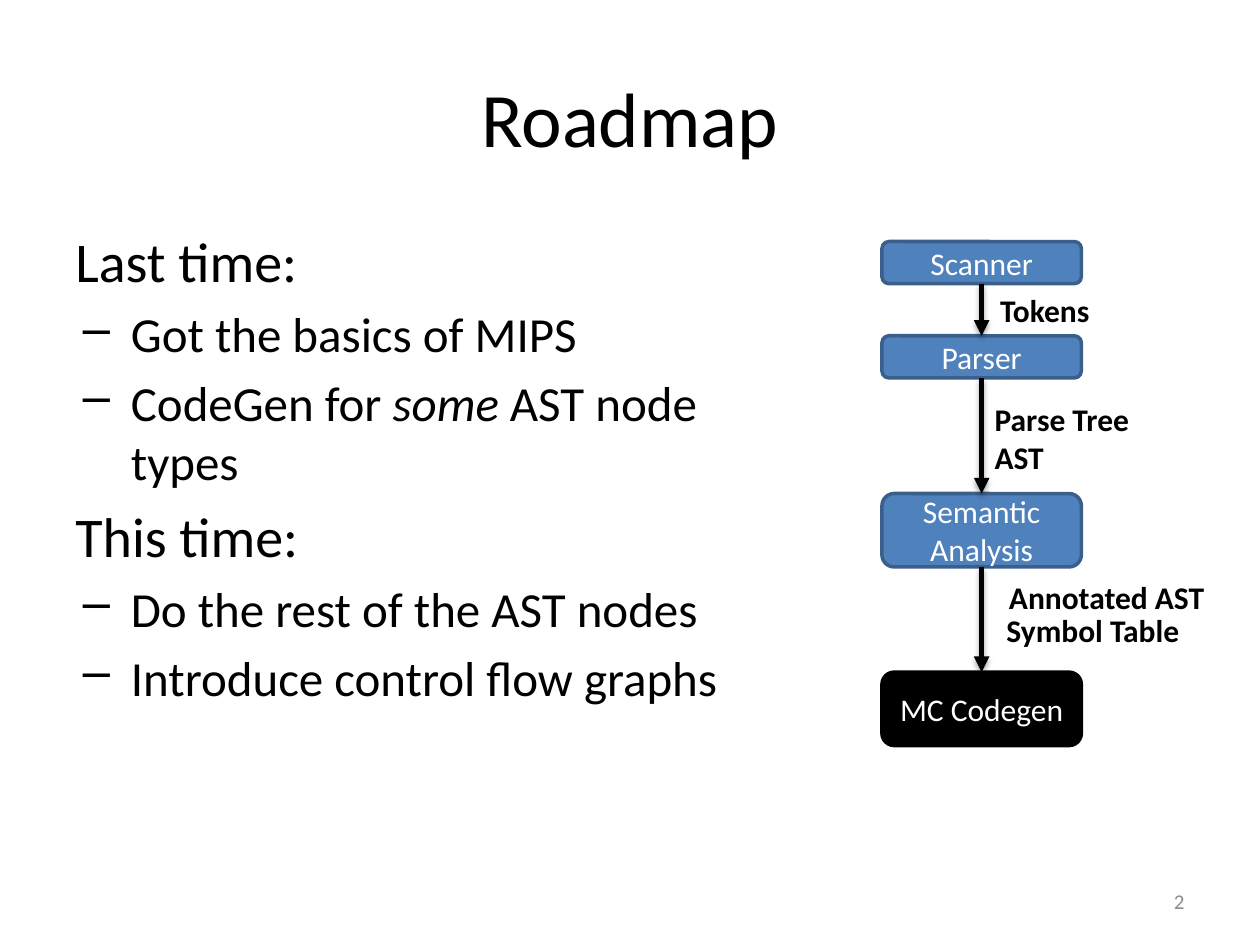
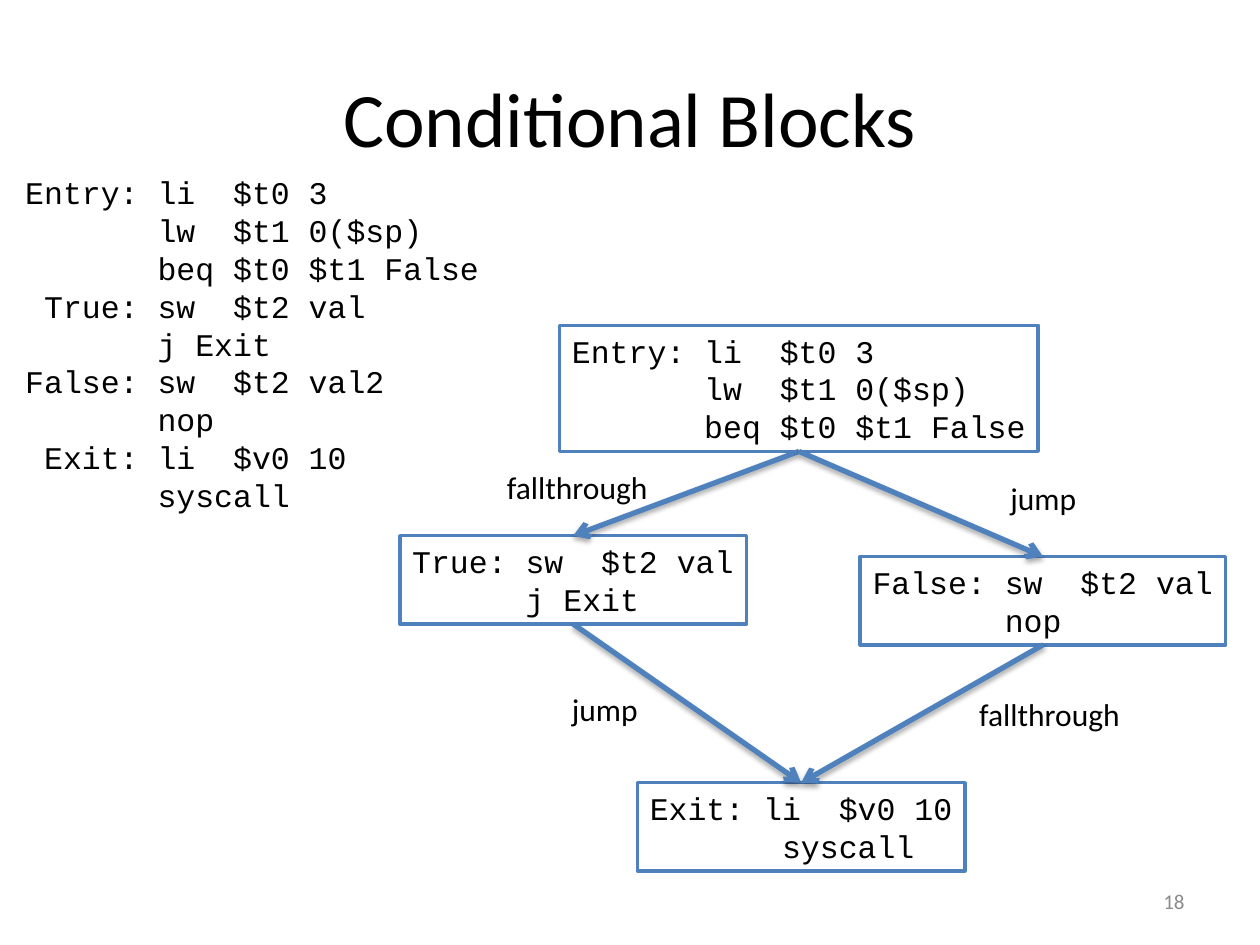
"""Build two compiler lecture slides: a roadmap and a control flow graph."""
from lxml import etree
from pptx import Presentation
from pptx.dml.color import RGBColor
from pptx.enum import shapes, text
from pptx.oxml import ns
from pptx.util import Cm, Pt

BLACK = RGBColor(0x00, 0x00, 0x00)
WHITE = RGBColor(0xFF, 0xFF, 0xFF)
BLUE = RGBColor(0x4F, 0x81, 0xBD)
NAVY = RGBColor(0x3A, 0x5F, 0x8B)
GRAY = RGBColor(0x8B, 0x8B, 0x8B)
SANS = "Calibri"
MONO = "Courier New"
TOP, BOTTOM = 0, 2
LEFT, CENTER, RIGHT = text.PP_ALIGN.LEFT, text.PP_ALIGN.CENTER, text.PP_ALIGN.RIGHT

CODE = """Entry: li  $t0 3
       lw  $t1 0($sp)
       beq $t0 $t1 False
 True: sw  $t2 val
       j Exit
False: sw  $t2 val2
       nop
 Exit: li  $v0 10
       syscall"""
ENTRY = """Entry: li  $t0 3
       lw  $t1 0($sp)
       beq $t0 $t1 False"""
TRUE = """True: sw  $t2 val
      j Exit"""
FALSE = """False: sw  $t2 val
       nop"""
EXIT = """Exit: li  $v0 10
       syscall"""


def add(parent, tag, **attrs):
    """Append a drawing element with the given attributes."""
    node = etree.SubElement(parent, ns.qn(tag))
    for name, value in attrs.items():
        node.set(name, str(value))
    return node


def style(para, size, color=BLACK, font=SANS, bold=False, align=LEFT):
    """Set the font and alignment of a paragraph."""
    para.font.size = Pt(size)
    para.font.name = font
    para.font.bold = bold
    para.font.color.rgb = color
    para.alignment = align


def write(shape, words, size=18, **look):
    """Fill a shape with one paragraph per line of words."""
    frame = shape.text_frame
    for i, line in enumerate(words.split("\n")):
        para = frame.paragraphs[0] if i == 0 else frame.add_paragraph()
        para.add_run().text = line
        style(para, size, **look)
    return frame


def place(x, y, wide, high):
    """Turn centimetres into a position and size."""
    return Cm(x), Cm(y), Cm(wide), Cm(high)


def fit(frame):
    """Keep lines unbroken and let the shape follow its text."""
    frame.word_wrap = False
    frame.auto_size = text.MSO_AUTO_SIZE.SHAPE_TO_FIT_TEXT


def start(deck, title, number):
    """Add a slide with its title and page number."""
    slide = deck.slides.add_slide(deck.slide_layouts[5])
    head = slide.shapes.title
    head.left, head.top, head.width, head.height = place(1.27, 0.76, 22.86, 3.18)
    frame = write(head, title, 44, align=CENTER)
    frame.vertical_anchor = text.MSO_ANCHOR.MIDDLE
    page = slide.shapes.add_textbox(*place(18.2, 17.65, 5.93, 1.02))
    frame = write(page, number, 12, color=GRAY, align=RIGHT)
    frame.vertical_anchor = text.MSO_ANCHOR.MIDDLE
    return slide


def label(slide, words, x, y, wide, high=1.02, **look):
    """Add free text that does not wrap."""
    shape = slide.shapes.add_textbox(*place(x, y, wide, high))
    fit(write(shape, words, **look))


def box(slide, kind, spot, fill, line):
    """Add a flat filled and outlined shape."""
    shape = slide.shapes.add_shape(kind, *place(*spot))
    shape.shadow.inherit = False
    shape.fill.solid()
    shape.fill.fore_color.rgb = fill
    shape.line.color.rgb = line
    shape.line.width = Pt(2)
    return shape


def stage(slide, words, y, high, fill=BLUE, line=NAVY):
    """Add a rounded compiler stage."""
    kind = shapes.MSO_SHAPE.ROUNDED_RECTANGLE
    shape = box(slide, kind, (17.78, y, 4.02, high), fill, line)
    frame = write(shape, words, color=WHITE, align=CENTER)
    frame.word_wrap = True
    frame.vertical_anchor = text.MSO_ANCHOR.MIDDLE
    return shape


def block(slide, words, *spot):
    """Add a framed basic block of code."""
    shape = box(slide, shapes.MSO_SHAPE.RECTANGLE, spot, WHITE, BLUE)
    frame = write(shape, words, font=MONO)
    frame.vertical_anchor = text.MSO_ANCHOR.TOP
    fit(frame)
    return shape


def arrow(slide, source, target, color, head):
    """Join the bottom of one shape to the top of another."""
    line = slide.shapes.add_connector(shapes.MSO_CONNECTOR.STRAIGHT, 0, 0, 0, 0)
    line.begin_connect(source, BOTTOM)
    line.end_connect(target, TOP)
    line.line.color.rgb = color
    line.line.width = Pt(3)
    add(line.line._get_or_add_ln(), "a:tailEnd", type=head)
    glow = add(line._element.spPr, "a:effectLst")
    shade = add(glow, "a:outerShdw", blurRad=Pt(3.1), dist=Pt(1.8),
                dir=5400000, rotWithShape=0)
    add(add(shade, "a:srgbClr", val=BLACK), "a:alpha", val=35000)


def dash(para):
    """Give a paragraph a hanging dash."""
    props = para._p.get_or_add_pPr()
    props.set("marL", str(Cm(1.12)))
    props.set("indent", str(-Cm(0.97)))
    add(props, "a:buChar", char="–")


def outline(slide, parts):
    """Add headings, each with its dashed points."""
    shape = slide.shapes.add_textbox(*place(1.27, 4.45, 13.77, 13.34))
    frame = shape.text_frame
    frame.word_wrap = True
    para = frame.paragraphs[0]
    for head, points in parts:
        for runs in [(head,), *points]:
            para = para if not para.runs else frame.add_paragraph()
            size = 32 if runs[0] == head else 28
            para.space_before = Pt(size / 5)
            if runs[0] != head:
                dash(para)
            style(para, size)
            for i, words in enumerate(runs):
                run = para.add_run()
                run.text = words
                if i == 1:
                    run.font.italic = True


def roadmap(deck):
    """Build the roadmap slide."""
    slide = start(deck, "Roadmap", "2")
    outline(slide, [
        ("Last time:", [("Got the basics of MIPS",),
                        ("CodeGen for ", "some ", "AST node types")]),
        ("This time:", [("Do the rest of the AST nodes",),
                        ("Introduce control flow graphs",)]),
    ])
    chain = [
        stage(slide, "Scanner", 4.87, 0.85),
        stage(slide, "Parser", 6.77, 0.85),
        stage(slide, "Semantic Analysis", 9.95, 1.48),
        stage(slide, "MC Codegen", 13.55, 1.48, BLACK, BLACK),
    ]
    for source, target in zip(chain, chain[1:]):
        arrow(slide, source, target, BLACK, "triangle")
    label(slide, "Tokens", 19.91, 5.74, 2.4, bold=True)
    label(slide, "Parse Tree\nAST", 19.8, 7.94, 3.3, 1.78, bold=True)
    label(slide, "Annotated AST", 20.09, 11.53, 4.5, bold=True)
    label(slide, "Symbol Table", 20.04, 12.2, 4.1, bold=True)


def branches(deck):
    """Build the conditional blocks slide."""
    slide = start(deck, "Conditional Blocks", "18")
    label(slide, CODE, 0.26, 3.37, 9.65, 7.11, font=MONO)
    entry = block(slide, ENTRY, 11.28, 6.56, 9.65, 2.54)
    yes = block(slide, TRUE, 8.06, 10.8, 6.99, 1.78)
    no = block(slide, FALSE, 17.34, 11.22, 7.37, 1.78)
    leave = block(slide, EXIT, 12.85, 15.78, 6.6, 1.78)
    for source, target in [(entry, yes), (entry, no), (yes, leave), (no, leave)]:
        arrow(slide, source, target, BLUE, "arrow")
    for x, y in [(9.97, 9.32), (19.49, 13.88)]:
        label(slide, "fallthrough", x, y, 3.5)
    for x, y in [(11.28, 13.79), (20.12, 9.53)]:
        label(slide, "jump", x, y, 1.9)


def main():
    """Build and save the deck."""
    deck = Presentation()
    deck.slide_width, deck.slide_height = Cm(25.4), Cm(19.05)
    roadmap(deck)
    branches(deck)
    deck.save("out.pptx")


if __name__ == "__main__":
    main()
